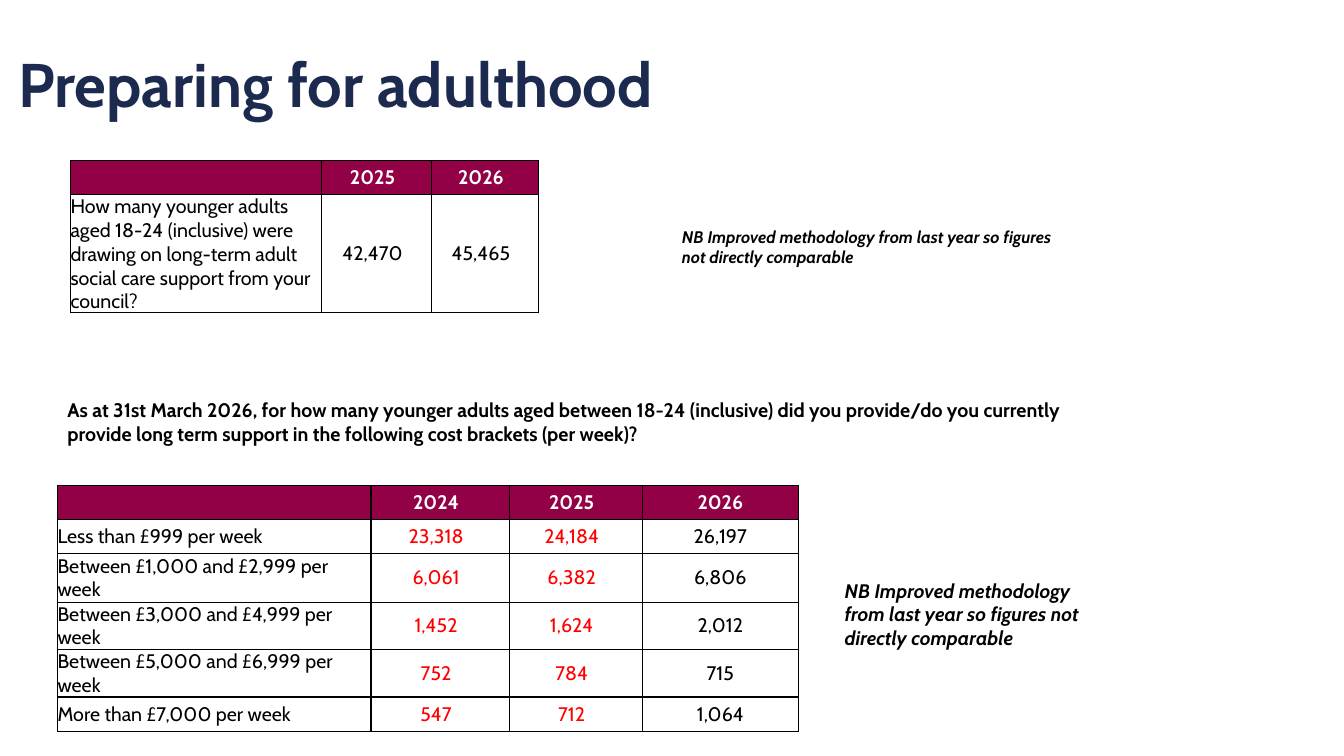
from dataclasses import dataclass

from pptx import Presentation
from pptx.dml.color import RGBColor
from pptx.enum.text import MSO_ANCHOR as Anchor, MSO_AUTO_SIZE as AutoSize, PP_ALIGN as Align
from pptx.oxml import parse_xml
from pptx.oxml.ns import nsdecls
from pptx.util import Inches, Pt

WIDTH, HEIGHT = Inches(13.33), Inches(7.5)


@dataclass(frozen=True)
class Theme:
    font: str = "Cabin"
    navy: str = "1D2A50"
    plum: str = "920146"
    white: str = "FFFFFF"
    black: str = "000000"
    red: str = "FF0000"
    title_size: int = 44
    body_size: int = 14
    small_size: int = 12


THEME = Theme()
NOTE = "NB Improved methodology from last year so figures not directly comparable"
QUESTION = (
    "As at 31st March 2026, for how many younger adults aged between 18-24 (inclusive) "
    "did you provide/do you currently provide long term support in the following "
    "cost brackets (per week)?"
)
SUPPORT_ROWS = [
    ["", "2025", "2026"],
    ["How many younger adults aged 18-24 (inclusive) were drawing on long-term adult "
     "social care support from your council?", "42,470", "45,465"],
]
COST_ROWS = [
    ["", "2024", "2025", "2026"],
    ["Less than £999 per week", "23,318", "24,184", "26,197"],
    ["Between £1,000 and £2,999 per week", "6,061", "6,382", "6,806"],
    ["Between £3,000 and £4,999 per week", "1,452", "1,624", "2,012"],
    ["Between £5,000 and £6,999 per week", "752", "784", "715"],
    ["More than £7,000 per week", "547", "712", "1,064"],
]


# Lengths are percentages of the slide's width and height
def across(share):
    return round(WIDTH * share / 100)


def down(share):
    return round(HEIGHT * share / 100)


def box(left, top, width, height):
    return across(left), down(top), across(width), down(height)


def apply(target, values):
    for name, value in values.items():
        setattr(target, name, value)


def write(frame, text, color=THEME.black, size=THEME.body_size, align=Align.LEFT,
          bold=False, italic=False):
    paragraph = frame.paragraphs[0]
    paragraph.alignment = align
    run = paragraph.add_run()
    run.text = text
    apply(run.font, {"name": THEME.font, "size": Pt(size), "bold": bold, "italic": italic})
    run.font.color.rgb = RGBColor.from_string(color)
    return paragraph


def add_title(slide, text, place):
    title = slide.shapes.title
    apply(title, dict(zip(("left", "top", "width", "height"), place)))
    apply(title.text_frame, {"vertical_anchor": Anchor.MIDDLE, "word_wrap": True,
                             "auto_size": AutoSize.NONE})
    paragraph = write(title.text_frame, text, THEME.navy, THEME.title_size, bold=True)
    paragraph.line_spacing = 0.9


def add_text(slide, text, place, **style):
    frame = slide.shapes.add_textbox(*place).text_frame
    apply(frame, {"word_wrap": True, "auto_size": AutoSize.SHAPE_TO_FIT_TEXT})
    write(frame, text, bold=True, **style)


def add_borders(cell):
    properties = cell._tc.get_or_add_tcPr()
    for index, side in enumerate(("lnL", "lnR", "lnT", "lnB")):
        properties.insert(index, parse_xml(
            f'<a:{side} {nsdecls("a")} w="12700"><a:solidFill>'
            f'<a:srgbClr val="{THEME.black}"/></a:solidFill></a:{side}>'))


def add_table(slide, rows, left, top, column_shares, row_shares,
              red_columns=(), flush_column=None):
    place = box(left, top, sum(column_shares), sum(row_shares))
    table = slide.shapes.add_table(len(rows), len(column_shares), *place).table
    for column, share in zip(table.columns, column_shares):
        column.width = across(share)
    for row, share in zip(table.rows, row_shares):
        row.height = down(share)
    for row_index, values in enumerate(rows):
        header = row_index == 0
        for column_index, text in enumerate(values):
            cell = table.cell(row_index, column_index)
            right = 0 if column_index == flush_column else Inches(0.08)
            apply(cell, {"margin_left": 0, "margin_top": 0, "margin_bottom": 0,
                         "margin_right": right, "vertical_anchor": Anchor.MIDDLE})
            cell.fill.solid()
            cell.fill.fore_color.rgb = RGBColor.from_string(THEME.plum if header else THEME.white)
            add_borders(cell)
            color = THEME.red if column_index in red_columns else THEME.black
            write(cell.text_frame, text, THEME.white if header else color,
                  align=Align.CENTER if column_index else Align.LEFT, bold=header)


def main():
    presentation = Presentation()
    apply(presentation, {"slide_width": WIDTH, "slide_height": HEIGHT})
    slide = presentation.slides.add_slide(presentation.slide_layouts.get_by_name("Title Only"))

    add_title(slide, "Preparing for adulthood", box(0.6, 1.87, 86.25, 19.33))

    # Cost brackets
    add_text(slide, QUESTION, box(4.28, 52, 78.9, 7.6))
    add_table(slide, COST_ROWS, 4.28, 64.2, [23.33, 10.28, 9.9, 11.63],
              [4.53, 4.53, 6.4, 6.27, 6.27, 4.53], red_columns=(1, 2), flush_column=3)

    # Younger adults drawing on support
    add_table(slide, SUPPORT_ROWS, 5.25, 21.2, [18.68, 8.18, 7.95], [4.53, 15.6])

    # Notes on comparability
    add_text(slide, NOTE, box(50, 29.33, 29.35, 6.67), size=THEME.small_size, italic=True)
    add_text(slide, NOTE, box(62.1, 75.87, 21.1, 10.8), italic=True)

    presentation.save("out.pptx")


if __name__ == "__main__":
    main()
